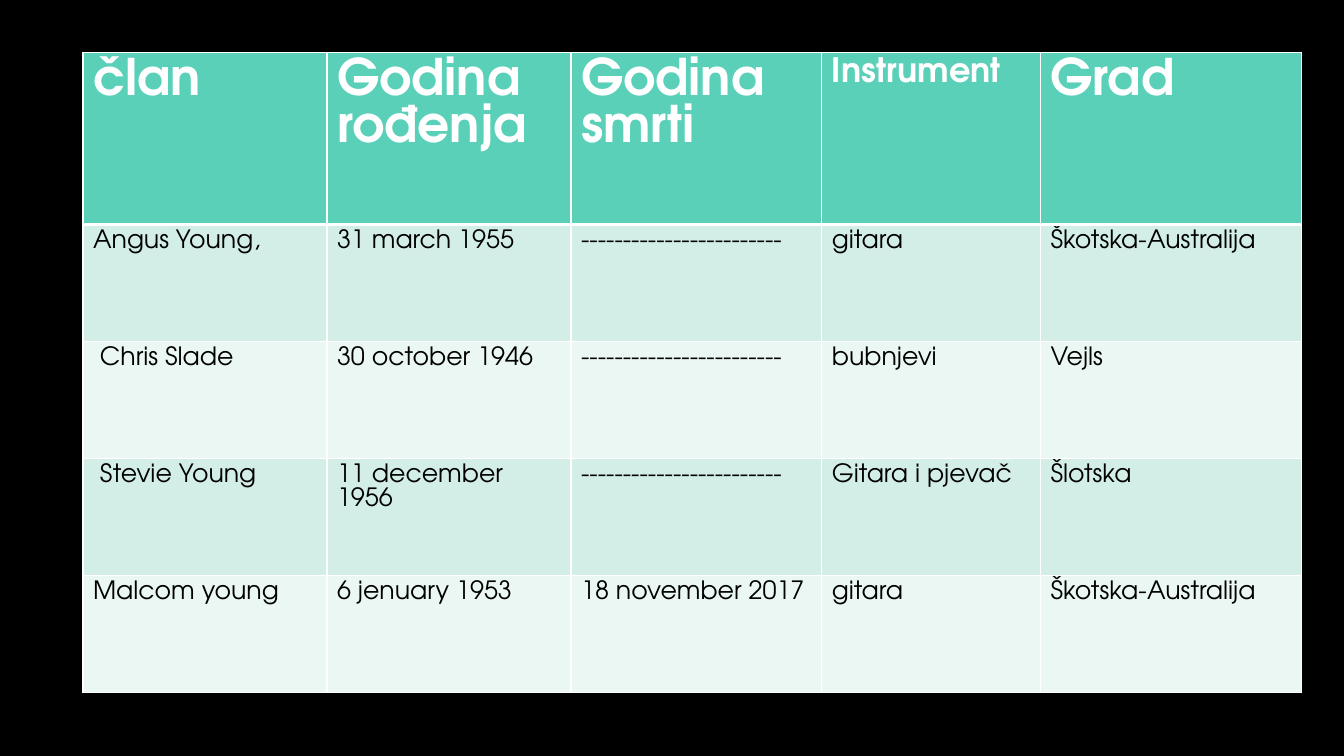
from dataclasses import dataclass

from lxml import etree
from pptx import Presentation, util as u
from pptx.dml.color import RGBColor
from pptx.oxml import ns


@dataclass(frozen=True)
class Theme:
    font: str = "TeX Gyre Adventor"
    background: str = "000000"
    header_fill: str = "5AD0B8"
    header_text: str = "FFFFFF"
    body_text: str = "000000"
    bands: tuple = ("D2EEE6", "EAF7F3")
    border: str = "FFFFFF"
    thin: int = 1
    thick: int = 3
    header_size: int = 36
    small_header_size: int = 24
    body_size: int = 18
    leading: float = 0.94


ALIVE = "-" * 24
HEADINGS = ["član", "Godina rođenja", "Godina\nsmrti", "Instrument", "Grad"]
MEMBERS = [
    ["Angus Young,", "31 march 1955", ALIVE, "gitara", "Škotska-Australija"],
    [" Chris Slade", "30 october 1946", ALIVE, "bubnjevi", "Vejls"],
    [" Stevie Young", "11 december 1956", ALIVE, "Gitara i pjevač", "Šlotska"],
    ["Malcom young", "6 jenuary 1953", "18 november 2017", "gitara",
     "Škotska-Australija"],
]
COLUMN_WIDTHS = [6.15, 6.15, 6.32, 5.51, 6.58]
HEADER_HEIGHT, MEMBER_HEIGHT = 4.34, 2.95


class SlideBuilder:
    def __init__(self, slide, theme):
        self.slide = slide
        self.theme = theme

    def background(self):
        fill = self.slide.background.fill
        fill.solid()
        fill.fore_color.rgb = RGBColor.from_string(self.theme.background)

    def table(self, left, top, widths, heights):
        frame = self.slide.shapes.add_table(
            len(heights), len(widths), u.Cm(left), u.Cm(top),
            u.Cm(sum(widths)), u.Cm(sum(heights)))
        for column, width in zip(frame.table.columns, widths):
            column.width = u.Cm(width)
        for row, height in zip(frame.table.rows, heights):
            row.height = u.Cm(height)
        return frame.table

    def borders(self, cell, top, bottom):
        """Draw all four cell edges; top and bottom are widths in points."""
        thin = self.theme.thin
        properties = cell._tc.get_or_add_tcPr()
        edges = [("lnL", thin), ("lnR", thin), ("lnT", top), ("lnB", bottom)]
        for position, (edge, width) in enumerate(edges):
            line = etree.Element(ns.qn(f"a:{edge}"), w=str(u.Pt(width)))
            fill = etree.SubElement(line, ns.qn("a:solidFill"))
            etree.SubElement(fill, ns.qn("a:srgbClr"), val=self.theme.border)
            properties.insert(position, line)

    def cell_text(self, cell, wording, size, color, bold):
        frame = cell.text_frame
        for number, line in enumerate(wording.split("\n")):
            paragraph = frame.add_paragraph() if number else frame.paragraphs[0]
            paragraph.line_spacing = u.Pt(round(size * self.theme.leading, 1))
            run = paragraph.add_run()
            run.text = line
            run.font.name = self.theme.font
            run.font.size = u.Pt(size)
            run.font.bold = bold
            run.font.color.rgb = RGBColor.from_string(color)

    def cell_fill(self, cell, color):
        cell.fill.solid()
        cell.fill.fore_color.rgb = RGBColor.from_string(color)

    def header_cell(self, cell, heading):
        theme = self.theme
        size = (theme.small_header_size if heading == "Instrument"
                else theme.header_size)
        self.cell_fill(cell, theme.header_fill)
        self.borders(cell, theme.thin, theme.thick)
        self.cell_text(cell, heading, size, theme.header_text, True)

    def member_cell(self, cell, fact, row):
        theme = self.theme
        self.cell_fill(cell, theme.bands[(row - 1) % 2])
        self.borders(cell, theme.thick if row == 1 else theme.thin, theme.thin)
        self.cell_text(cell, fact, theme.body_size, theme.body_text, False)


def main():
    deck = Presentation()
    deck.slide_width, deck.slide_height = u.Cm(33.87), u.Cm(19.05)
    builder = SlideBuilder(deck.slides.add_slide(deck.slide_layouts[6]), Theme())
    builder.background()
    heights = [HEADER_HEIGHT] + [MEMBER_HEIGHT] * len(MEMBERS)
    members = builder.table(2.09, 1.32, COLUMN_WIDTHS, heights)
    for column, heading in enumerate(HEADINGS):
        builder.header_cell(members.cell(0, column), heading)
    for row, facts in enumerate(MEMBERS, 1):
        for column, fact in enumerate(facts):
            builder.member_cell(members.cell(row, column), fact, row)
    deck.save("out.pptx")


if __name__ == "__main__":
    main()
